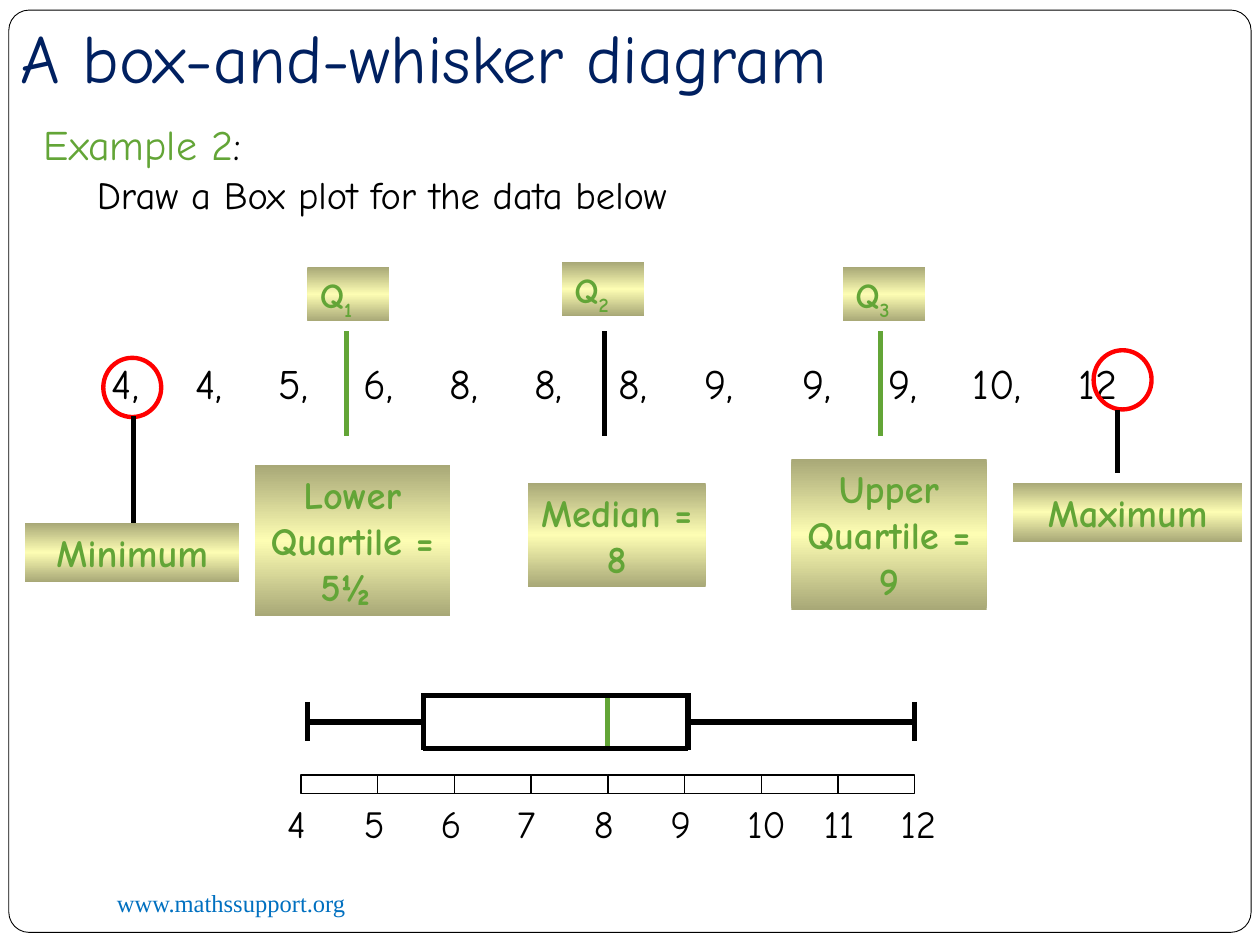
from copy import deepcopy
from dataclasses import dataclass

from pptx import Presentation
from pptx.dml.color import RGBColor
from pptx.enum.shapes import MSO_CONNECTOR, MSO_SHAPE
from pptx.enum.text import MSO_ANCHOR, PP_ALIGN
from pptx.oxml.ns import qn
from pptx.oxml.xmlchemy import OxmlElement
from pptx.util import Inches, Pt


@dataclass(frozen=True)
class Theme:
    ink: str = "000000"
    navy: str = "002060"
    green: str = "63A537"
    red: str = "FF0000"
    blue: str = "0070C0"
    paper: str = "FFFFFF"
    bands: tuple = ("A8A877", "FDFDB3", "A8A877")
    face: str = "Comic Neue"
    serif: str = "Times New Roman"
    head: float = 39
    lead: float = 24
    body: float = 22
    mark: float = 20
    foot: float = 14
    bold: float = 3
    ring: float = 2.5
    thin: float = 0.75
    hair: float = 0.5


T = Theme()
deck = Presentation()
deck.slide_width, deck.slide_height = Inches(10), Inches(7.5)
COL, ROW = deck.slide_width / 100, deck.slide_height / 75  # square grid


def grid(x, y, w, h):
    return [round(n * u) for n, u in zip((x, y, w, h), (COL, ROW, COL, ROW))]


def rgb(code):
    return RGBColor.from_string(code)


def style(item, **values):
    for name, value in values.items():
        setattr(item, name, value)


def write(para, text, size, color, face=T.face, bold=False):
    run = para.add_run()
    run.text = text
    style(run.font, name=face, size=Pt(size), bold=bold)
    run.font.color.rgb = rgb(color)
    return run


def label(shapes, box, text, size=T.body, color=T.ink, face=T.face, wrap=True):
    frame = shapes.add_textbox(*grid(*box)).text_frame
    frame.word_wrap = wrap
    para = frame.paragraphs[0]
    write(para, text, size, color, face)
    return para


def line(shapes, x1, y1, x2, y2, color=T.ink):
    a, b, c, d = grid(x1, y1, x2, y2)
    link = shapes.add_connector(MSO_CONNECTOR.STRAIGHT, a, b, c, d)
    link.line.color.rgb = rgb(color)
    link.line.width = Pt(T.bold)
    link._element.spPr.append(OxmlElement("a:effectLst"))


def shape(shapes, kind, box, color=None, width=T.thin):
    """Add an unfilled shape; without a color it has no outline."""
    item = shapes.add_shape(kind, *grid(*box))
    item.shadow.inherit = False
    item.fill.background()
    if color:
        item.line.color.rgb = rgb(color)
        item.line.width = Pt(width)
    else:
        item.line.fill.background()
    return item


def card(shapes, box, text, size=T.body, align=PP_ALIGN.CENTER):
    """Add a gold banded card and return its paragraph."""
    item = shape(shapes, MSO_SHAPE.RECTANGLE, box)
    fill = item.fill
    fill.gradient()
    fill.gradient_angle = 270
    first = next(item._element.spPr.iter(qn("a:gs")))
    first.addnext(deepcopy(first))
    for i, (stop, code) in enumerate(zip(fill.gradient_stops, T.bands)):
        stop.position = i / 2
        stop.color.rgb = rgb(code)
    style(item.text_frame, word_wrap=True, vertical_anchor=MSO_ANCHOR.TOP)
    para = item.text_frame.paragraphs[0]
    para.alignment = align
    write(para, text, size, T.green, bold=True)
    return para


def border(shapes, x, y, w, h):
    edge = shape(shapes, MSO_SHAPE.ROUNDED_RECTANGLE, (x, y, w, h), T.ink, T.hair)
    edge.adjustments[0] = 0.022
    edge.fill.solid()
    edge.fill.fore_color.rgb = rgb(T.paper)
    label(shapes, (x + 7.6, y + h - 4, 32.5, 3.4), "www.mathssupport.org",
          T.foot, T.blue, T.serif)


def heading(shapes, x, y, w, h):
    title = shapes.title
    shapes._spTree.append(title._element)  # bring in front of the border
    left, top, width, height = grid(x, y, w, h)
    style(title, left=left, top=top, width=width, height=height)
    style(title.text_frame, word_wrap=True, vertical_anchor=MSO_ANCHOR.MIDDLE)
    para = title.text_frame.paragraphs[0]
    para.alignment = PP_ALIGN.LEFT
    write(para, "A box-and-whisker diagram", T.head, T.navy)


def task(shapes, x, y):
    para = label(shapes, (x, y, 20.1, 5), "Example 2", T.lead, T.green, wrap=False)
    write(para, ":", T.lead, T.ink)
    label(shapes, (x + 4.2, y + 4.2, 90.2, 4.7), "Draw a Box plot for the data below")


def data(shapes, x, y, w, h):
    """Set the values on tab stops and ring the two extremes."""
    values = "4, 4, 5, 6, 8, 8, 8, 9, 9, 9, 10, 12".split()
    stops = (6.6, 13.2, 20, 26.8, 33.5, 40.2, 47, 54.8, 61.6, 68.3, 76.7)
    frame = shapes.add_textbox(*grid(x, y, w, h)).text_frame
    frame.word_wrap = True
    para = frame.paragraphs[0]
    tabs = OxmlElement("a:tabLst")
    for stop in stops:
        tab = OxmlElement("a:tab")
        tab.set("pos", str(round(stop * COL)))
        tab.set("algn", "l")
        tabs.append(tab)
    para._p.get_or_add_pPr().append(tabs)
    write(para, "\t".join(values), T.lead, T.ink)
    for dx, dy in ((0.3, 0.5), (78.9, -0.1)):
        shape(shapes, MSO_SHAPE.OVAL, (x + dx, y + dy, 4.6, 4.7), T.red, T.ring)


def quarter(shapes, x, y, rank, mark, note, text, color):
    """Draw a cut at x, with its mark above and its note below."""
    line(shapes, x, y, x, y + 8.3, color)
    para = card(shapes, (*mark, 6.5, 4.3), "Q", T.mark, PP_ALIGN.LEFT)
    low = write(para, rank, T.mark, T.green, bold=True)
    low.font._element.set("baseline", "-25000")
    card(shapes, note, text)


def extreme(shapes, x, y, drop, note, text):
    line(shapes, x, y, x, y + drop)
    card(shapes, note, text)


def plot(shapes, x, y, h):
    low, left, mid, right, high = (x + n for n in (0.5, 9.7, 24.3, 30.7, 48.7))
    line(shapes, mid, y, mid, y + h, T.green)
    for end, edge in ((low, left), (high, right)):
        line(shapes, end, y + 0.7, end, y + 3.8)
        line(shapes, end, y + 2.3, edge, y + 2.3)
        line(shapes, edge, y, edge, y + h)
    for side in (y + 0.2, y + h - 0.1):
        line(shapes, left, side, right, side)


def scale(shapes, x, y, w, h):
    first, last = 4, 12
    step = w / (last - first)
    for i, value in enumerate(range(first, last + 1)):
        spot = x + i * step
        if value < last:
            shape(shapes, MSO_SHAPE.RECTANGLE, (spot, y, step, h), T.ink)
        width = 4.2 if value < 10 else 6.7
        label(shapes, (spot - 2.1, y + h, width, 4.7), str(value))


def main():
    slide = deck.slides.add_slide(deck.slide_layouts[5])
    shapes = slide.shapes
    border(shapes, 0.7, 0.8, 98.6, 73.2)
    heading(shapes, 0.6, 0.8, 85, 7.4)
    task(shapes, 2.5, 8.9)
    quarter(shapes, 27.5, 26.3, "1", (24.4, 21.2), (20.2, 36.9, 15.5, 12),
            "Lower Quartile = 5½ ", T.green)
    quarter(shapes, 69.9, 26.3, "3", (66.9, 21.2), (62.8, 36.4, 15.5, 12),
            "Upper Quartile = 9", T.green)
    quarter(shapes, 48, 26.3, "2", (44.6, 20.8), (41.9, 38.3, 14.1, 8.3),
            "Median = 8", T.ink)
    data(shapes, 7.9, 27.9, 87.5, 5)
    extreme(shapes, 10.6, 33, 8.8, (2, 41.5, 17, 4.7), "Minimum")
    extreme(shapes, 88.7, 32.5, 5, (80.4, 38.3, 18.2, 4.7), "Maximum")
    scale(shapes, 23.9, 61.5, 48.7, 1.5)
    plot(shapes, 23.9, 55, 4.5)
    deck.save("out.pptx")


if __name__ == "__main__":
    main()
